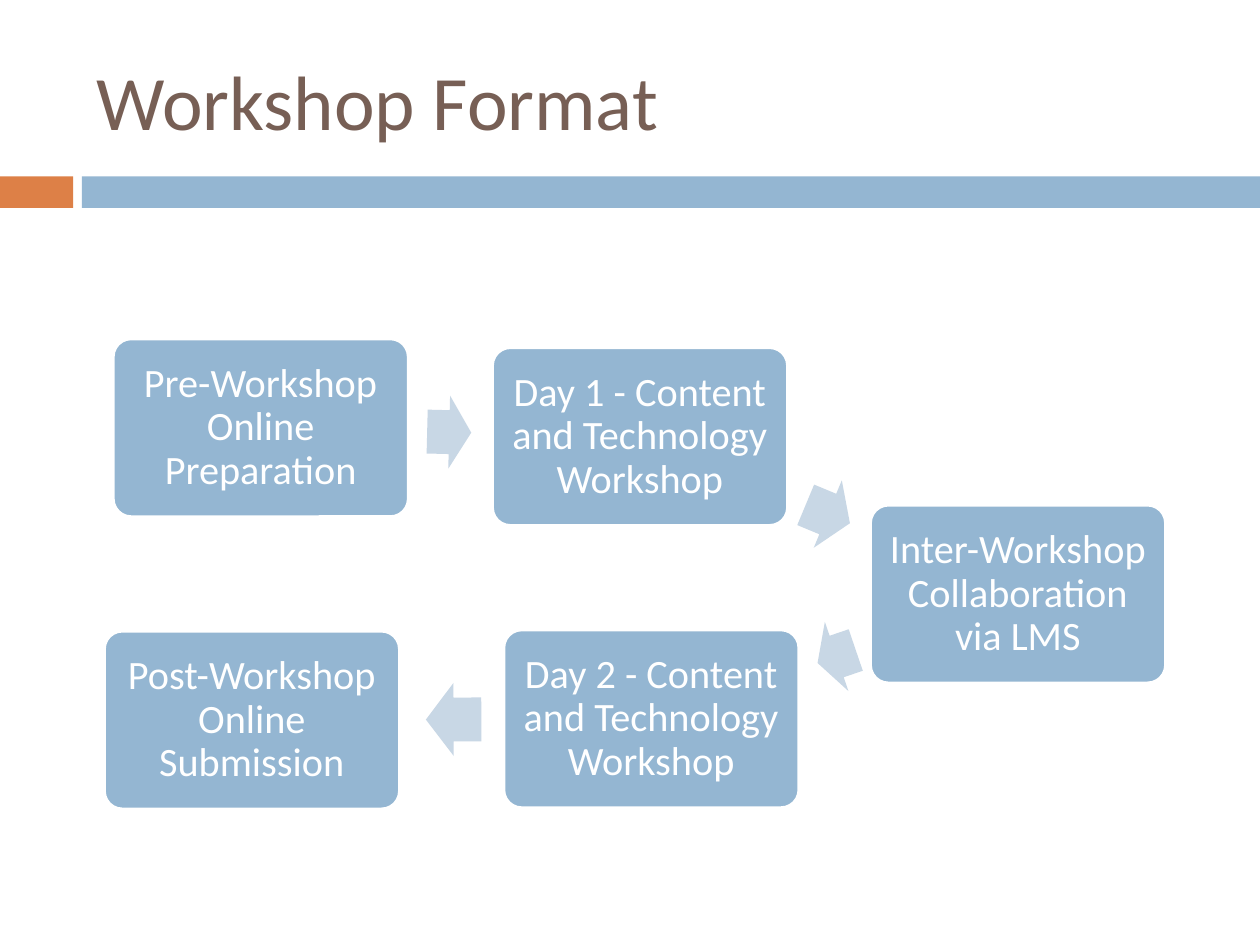
import pptx
import pptx.util
from pptx.dml.color import RGBColor
from pptx.enum.shapes import MSO_SHAPE
from pptx.enum.text import MSO_ANCHOR, PP_ALIGN
from pptx.util import Inches

BLUE = RGBColor(0x94, 0xB6, 0xD2)
PALE_BLUE = RGBColor(0xC8, 0xD7, 0xE5)
ORANGE = RGBColor(0xDD, 0x80, 0x47)
BROWN = RGBColor(0x77, 0x5F, 0x55)
WHITE = RGBColor(0xFF, 0xFF, 0xFF)

prs = pptx.Presentation()
prs.slide_width, prs.slide_height = Inches(10), Inches(7.5)
s = prs.slides.add_slide(prs.slide_layouts[6])


def add_shape(kind, x, y, w, h, fill):
    sp = s.shapes.add_shape(kind, Inches(x), Inches(y), Inches(w), Inches(h))
    sp.shadow.inherit = False
    sp.fill.solid()
    sp.fill.fore_color.rgb = fill
    sp.line.fill.background()
    return sp


def add_text(sp, text, size, color, frame_format, paragraph_format):
    tf = sp.text_frame
    for name, value in frame_format.items():
        setattr(tf, name, value)
    p = tf.paragraphs[0]
    for name, value in paragraph_format.items():
        setattr(p, name, value)
    r = p.add_run()
    r.text = text
    r.font.name = "Calibri"
    r.font.size = pptx.util.Pt(size)
    r.font.color.rgb = color


# Title and the band below it
add_shape(MSO_SHAPE.RECTANGLE, 0, 1.4, 0.58, 0.25, ORANGE)
add_shape(MSO_SHAPE.RECTANGLE, 0.65, 1.4, 9.35, 0.25, BLUE)
title = s.shapes.add_textbox(Inches(0.67), Inches(0.25), Inches(8.92), Inches(1.08))
frame_format = {"word_wrap": True, "vertical_anchor": MSO_ANCHOR.MIDDLE}
add_text(title, "Workshop Format", 44, BROWN, frame_format,
         {"alignment": PP_ALIGN.LEFT})

# Workshop steps
steps = [
    ("Pre-Workshop Online Preparation", 0.9, 2.69),
    ("Day 1 - Content and Technology Workshop", 3.91, 2.76),
    ("Inter-Workshop Collaboration via LMS", 6.91, 4.01),
    ("Day 2 - Content and Technology Workshop", 4, 5),
    ("Post-Workshop Online Submission", 0.83, 5.01),
]
margins = ("margin_left", "margin_right", "margin_top", "margin_bottom")
step_frame = frame_format | {name: Inches(0.1) for name in margins}
step_paragraph = {"alignment": PP_ALIGN.CENTER, "line_spacing": 0.9}
for text, x, y in steps:
    sp = add_shape(MSO_SHAPE.ROUNDED_RECTANGLE, x, y, 2.34, 1.41, BLUE)
    sp.adjustments[0] = 0.1
    sp.line.color.rgb = WHITE
    sp.line.width = pptx.util.Pt(1.5)
    add_text(sp, text, 23, WHITE, step_frame, step_paragraph)

# Arrows from each step to the next: left, top, width, rotation
arrows = [
    (3.39, 3.14, 0.35, 1.4),
    (6.38, 3.79, 0.38, 22.6),
    (6.48, 4.92, 0.32, 161.2),
    (3.38, 5.42, 0.44, 179.8),
]
for x, y, w, rotation in arrows:
    sp = add_shape(MSO_SHAPE.RIGHT_ARROW, x, y, w, 0.58, PALE_BLUE)
    sp.adjustments[0] = 0.6
    sp.adjustments[1] = 0.5
    sp.rotation = rotation

prs.save("out.pptx")
